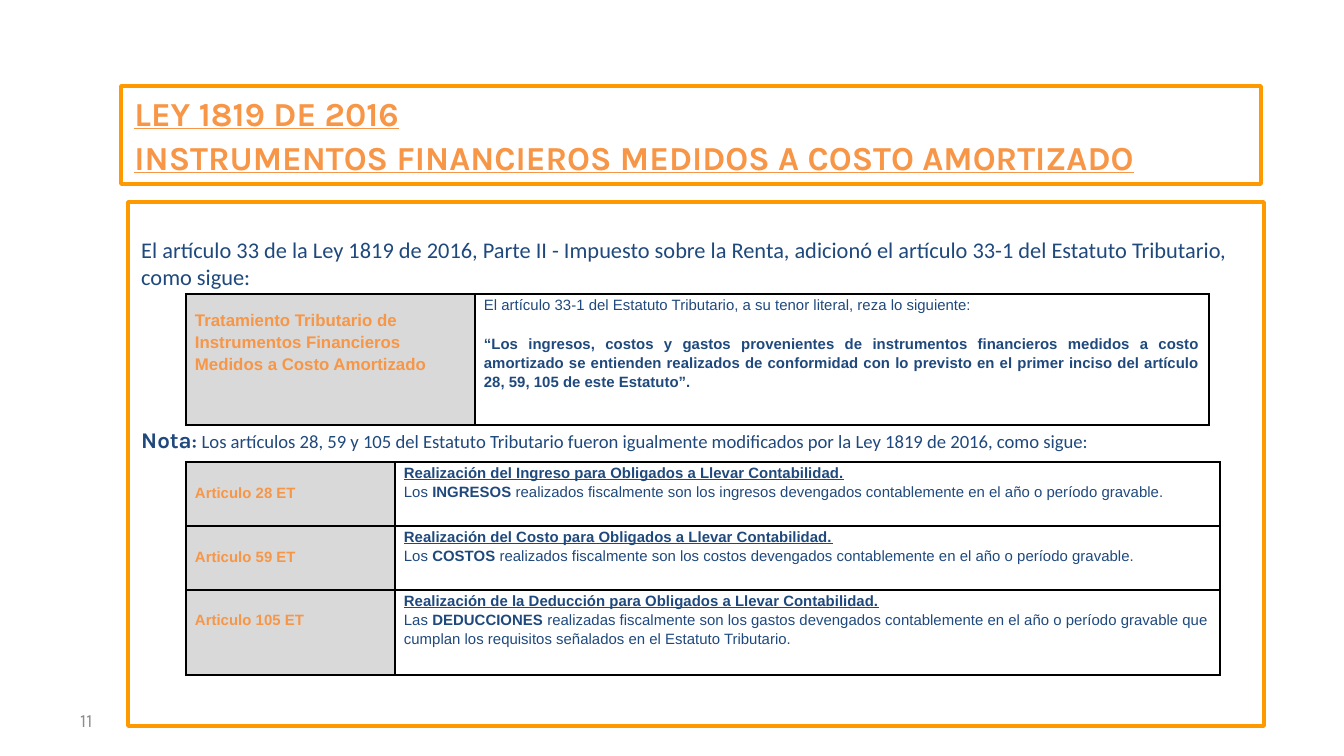
from lxml import etree
from pptx import Presentation
from pptx import util as u
from pptx.dml.color import RGBColor
from pptx.enum import shapes, text
from pptx.oxml.ns import qn

PX = 914400 / 134.4
ORANGE = RGBColor(0xF7, 0x96, 0x46)
FRAME = RGBColor(0xFF, 0x99, 0x00)
BLUE = RGBColor(0x1F, 0x49, 0x7D)
GREY = RGBColor(0xD9, 0xD9, 0xD9)
DIM = RGBColor(0x8C, 0x8C, 0x8C)
WHITE = RGBColor(0xFF, 0xFF, 0xFF)

# A paragraph is a list of (text, style); style holds "b" bold, "u" underline
TITLE = ["LEY 1819 DE 2016",
         "INSTRUMENTOS FINANCIEROS MEDIDOS A COSTO AMORTIZADO"]
INTRO = ("El artículo 33 de la Ley 1819 de 2016, Parte II - Impuesto sobre la Renta, "
         "adicionó el artículo 33-1 del Estatuto Tributario, como sigue:")
NOTE = ("Los artículos 28, 59 y 105 del Estatuto Tributario fueron igualmente "
        "modificados por la Ley 1819 de 2016, como sigue:")
TOPIC = ["Tratamiento Tributario de Instrumentos Financieros",
         "Medidos a Costo Amortizado"]
QUOTE = [
    [("El artículo 33-1 del Estatuto Tributario, a su tenor literal, "
      "reza lo siguiente:", "")],
    [("“Los ingresos, costos y gastos provenientes de instrumentos financieros "
      "medidos a costo amortizado se entienden realizados de conformidad con lo "
      "previsto en el primer inciso del artículo 28, 59, 105 de este Estatuto”.", "b")],
]
ITEMS = [  # article, heading subject, article word, key word, rest
    ("28", "del Ingreso", "Los ", "INGRESOS",
     " realizados fiscalmente son los ingresos devengados contablemente en el año "
     "o período gravable."),
    ("59", "del Costo", "Los ", "COSTOS",
     " realizados fiscalmente son los costos devengados contablemente en el año "
     "o período gravable."),
    ("105", "de la Deducción", "Las ", "DEDUCCIONES",
     " realizadas fiscalmente son los gastos devengados contablemente en el año "
     "o período gravable que cumplan los requisitos señalados en el Estatuto "
     "Tributario."),
]


def px(*nums):
    return [u.Emu(round(n * PX)) for n in nums]


def style(run, font, size, color, marks=""):
    f = run.font
    f.name, f.size, f.color.rgb = font, u.Pt(size), color
    f.bold, f.underline = "b" in marks, "u" in marks


def outline(box):
    box.fill.solid()
    box.fill.fore_color.rgb = WHITE
    box.line.color.rgb = FRAME
    box.line.width = u.Pt(2)


def write(cell, paras, size, color, top=0, just=False, gap=0):
    cell.margin_left, cell.margin_right, cell.margin_top, cell.margin_bottom = px(9, 9, top, 0)
    frame = cell.text_frame
    frame.text = "\n".join("" for _ in paras)
    for p, runs in zip(frame.paragraphs, paras):
        p.line_spacing = 1.15
        p.alignment = text.PP_ALIGN.JUSTIFY if just else text.PP_ALIGN.LEFT
        if p is not frame.paragraphs[-1] and gap:
            p.space_after = u.Pt(gap)
        for words, marks in runs:
            run = p.add_run()
            run.text = words
            style(run, "Arial", size, color, marks)
    if gap:
        frame.paragraphs[-1].space_after = u.Pt(0)


def border(cell):
    props = cell._tc.get_or_add_tcPr()
    for i, side in enumerate(("a:lnL", "a:lnR", "a:lnT", "a:lnB")):
        line = etree.Element(qn(side), w=str(u.Pt(1)))
        fill = etree.SubElement(line, qn("a:solidFill"))
        etree.SubElement(fill, qn("a:srgbClr"), val="000000")
        props.insert(i, line)


def grid(slide, left, top, cols, rows):
    """Add a bordered table whose first column is grey."""
    area = px(left, top, sum(cols), sum(rows))
    table = slide.shapes.add_table(len(rows), len(cols), *area).table
    table.first_row = table.horz_banding = False
    for col, wide in zip(table.columns, px(*cols)):
        col.width = wide
    for row, high in zip(table.rows, px(*rows)):
        row.height = high
        for i, cell in enumerate(row.cells):
            if i == 0:
                cell.fill.solid()
                cell.fill.fore_color.rgb = GREY
            else:
                cell.fill.background()
            border(cell)
    return table


def main():
    deck = Presentation()
    deck.slide_width, deck.slide_height = px(1344, 756)
    slide = deck.slides.add_slide(deck.slide_layouts[5])

    title = slide.shapes.title
    title.left, title.top, title.width, title.height = px(121, 86, 1140, 98)
    outline(title)
    frame = title.text_frame
    frame.text = "\n".join(TITLE)
    frame.auto_size = text.MSO_AUTO_SIZE.NONE
    frame.vertical_anchor = text.MSO_ANCHOR.TOP
    for p in frame.paragraphs:
        p.alignment = text.PP_ALIGN.LEFT
        p.space_before, p.space_after = u.Pt(0), u.Pt(2)
        style(p.runs[0], "Karla", 18, ORANGE, "bu")

    number = slide.shapes.add_textbox(*px(67, 700, 313, 40)).text_frame
    number.text = "11"
    number.word_wrap = True
    number.vertical_anchor = text.MSO_ANCHOR.MIDDLE
    style(number.paragraphs[0].runs[0], "Karla", 10, DIM)

    body = slide.shapes.add_shape(shapes.MSO_SHAPE.RECTANGLE, *px(128, 202, 1136, 524))
    body.shadow.inherit = False
    outline(body)
    frame = body.text_frame
    frame.word_wrap = True
    frame.vertical_anchor = text.MSO_ANCHOR.TOP
    frame.margin_top, = px(34)
    intro, note = frame.paragraphs[0], frame.add_paragraph()
    note.space_before = u.Pt(73)
    for p, words, font, size, marks in (
            (intro, INTRO, "Calibri", 12, ""),
            (note, "Nota", "Karla", 12, "b"),
            (note, ": ", "Karla", 10, "b"),
            (note, NOTE, "Calibri", 10, "")):
        p.alignment = text.PP_ALIGN.LEFT
        run = p.add_run()
        run.text = words
        style(run, font, size, BLUE, marks)

    law = grid(slide, 186, 294, (289, 734), (131,))
    write(law.cell(0, 0), [[(words, "b")] for words in TOPIC], 9, ORANGE, top=15)
    write(law.cell(0, 1), QUOTE, 8, BLUE, just=True, gap=10.6)

    rules = grid(slide, 186, 462, (209, 825), (64, 64, 85))
    for i, (num, topic, start, key, rest) in enumerate(ITEMS):
        head = f"Realización {topic} para Obligados a Llevar Contabilidad."
        write(rules.cell(i, 0), [[(f"Articulo {num} ET", "b")]], 8, ORANGE, top=20, just=True)
        write(rules.cell(i, 1),
              [[(head, "bu")], [(start, ""), (key, "b"), (rest, "")]], 8, BLUE)

    deck.save("out.pptx")


if __name__ == "__main__":
    main()
